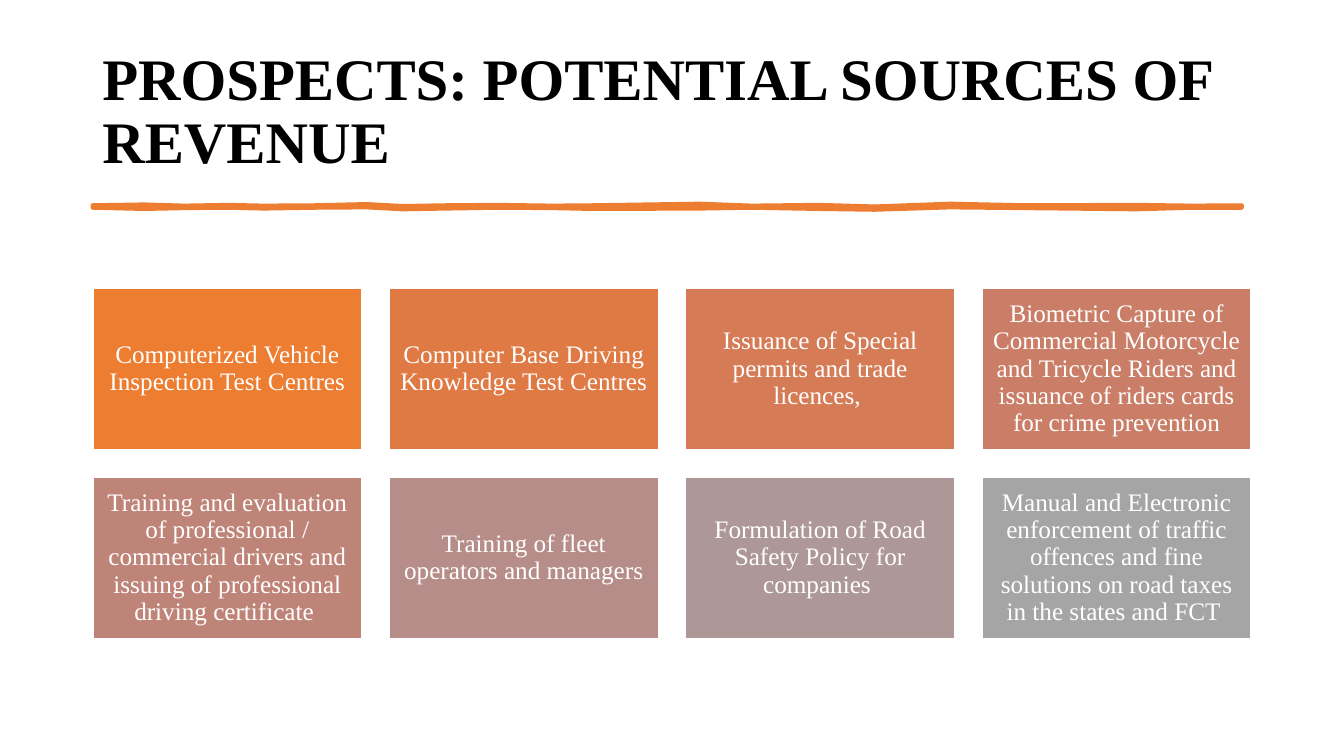
from pptx import Presentation
from pptx.dml.color import RGBColor
from pptx.enum import shapes, text
from pptx.util import Cm, Pt

BLACK = RGBColor(0x00, 0x00, 0x00)
WHITE = RGBColor(0xFF, 0xFF, 0xFF)
ORANGE = RGBColor(0xED, 0x7D, 0x31)
FONT = "Times New Roman"

# Each revenue source with the fill of its card
SOURCES = [
    ("Computerized Vehicle Inspection Test Centres", ORANGE),
    ("Computer Base Driving Knowledge Test Centres", RGBColor(0xE0, 0x7A, 0x44)),
    ("Issuance of Special permits and trade licences, ", RGBColor(0xD5, 0x7B, 0x56)),
    ("Biometric Capture of Commercial Motorcycle and Tricycle Riders "
     "and issuance of riders cards for crime prevention", RGBColor(0xCA, 0x7E, 0x67)),
    ("Training and evaluation of professional / commercial drivers "
     "and issuing of professional driving certificate ", RGBColor(0xBF, 0x84, 0x78)),
    ("Training of fleet operators and managers", RGBColor(0xB6, 0x8D, 0x88)),
    ("Formulation of Road Safety Policy for companies ", RGBColor(0xAD, 0x98, 0x97)),
    ("Manual and Electronic enforcement of traffic offences and fine "
     "solutions on road taxes in the states and FCT ", RGBColor(0xA5, 0xA5, 0xA5)),
]

# Brush stroke in cm from its corner: distance along, upper edge, lower edge
STROKE = [
    (0, 0.04, 0.09), (1.3, 0.02, 0.12), (2.3, 0.05, 0.1), (3.4, 0.03, 0.09),
    (4.3, 0.05, 0.11), (5.6, 0.04, 0.09), (6.9, 0.01, 0.08), (7.8, 0.06, 0.13),
    (8.9, 0.04, 0.11), (10.2, 0.03, 0.09), (11.6, 0.05, 0.1), (12.6, 0.04, 0.12),
    (15.3, 0, 0.11), (16.6, 0.05, 0.09), (18.3, 0.03, 0.12), (19.7, 0.07, 0.14),
    (21.6, 0, 0.08), (23.5, 0.04, 0.1), (26.3, 0.03, 0.13), (27.7, 0.05, 0.09),
    (28.95, 0.04, 0.09),
]


def write_text(tf, content, size, color, bold=False, align=None, inset=0.25,
               inset_y=0.13, after=0):
    tf.word_wrap = True
    tf.vertical_anchor = text.MSO_ANCHOR.MIDDLE
    tf.margin_left = tf.margin_right = Cm(inset)
    tf.margin_top = tf.margin_bottom = Cm(inset_y)
    p = tf.paragraphs[0]
    p.alignment = align
    p.line_spacing = 0.9
    p.space_after = Pt(after)
    r = p.add_run()
    r.text = content
    r.font.name = FONT
    r.font.size = Pt(size)
    r.font.bold = bold
    r.font.color.rgb = color


def add_title(s, left, top, width, height):
    sp = s.shapes.add_textbox(Cm(left), Cm(top), Cm(width), Cm(height))
    write_text(sp.text_frame, "PROSPECTS: POTENTIAL SOURCES OF REVENUE", 42, BLACK,
               bold=True, align=text.PP_ALIGN.LEFT, after=8)


def add_brush_line(s, left, top):
    upper = [(x, y) for x, y, _ in STROKE]
    lower = [(x, y) for x, _, y in reversed(STROKE)]
    points = [(Cm(left + x), Cm(top + y)) for x, y in upper + lower]
    fb = s.shapes.build_freeform(*points[0])
    fb.add_line_segments(points[1:], close=True)
    sp = fb.convert_to_shape()
    sp.shadow.inherit = False
    sp.fill.solid()
    sp.fill.fore_color.rgb = ORANGE
    sp.line.color.rgb = ORANGE
    sp.line.width = Pt(3.25)


def add_cards(s, left, top, width, height, columns=4, rows=2, gap=0.69):
    card_w = (width - gap * (columns - 1)) / columns
    card_h = (height - gap * (rows - 1)) / rows
    for i, (label, color) in enumerate(SOURCES):
        row, column = divmod(i, columns)
        sp = s.shapes.add_shape(
            shapes.MSO_SHAPE.RECTANGLE,
            Cm(left + column * (card_w + gap)), Cm(top + row * (card_h + gap)),
            Cm(card_w), Cm(card_h))
        sp.shadow.inherit = False
        sp.fill.solid()
        sp.fill.fore_color.rgb = color
        sp.line.color.rgb = WHITE
        sp.line.width = Pt(1)
        write_text(sp.text_frame, label, 18, WHITE, align=text.PP_ALIGN.CENTER,
                   inset=0.18, inset_y=0.18)


def main():
    prs = Presentation()
    prs.slide_width, prs.slide_height = Cm(33.87), Cm(19.05)
    s = prs.slides.add_slide(prs.slide_layouts[6])
    # Heading and its underline
    add_title(s, 2.33, 1.01, 29.21, 3.68)
    add_brush_line(s, 2.34, 5.14)
    # Grid of revenue sources
    add_cards(s, 2.34, 7.26, 29.19, 8.83)
    prs.save("out.pptx")


if __name__ == "__main__":
    main()
